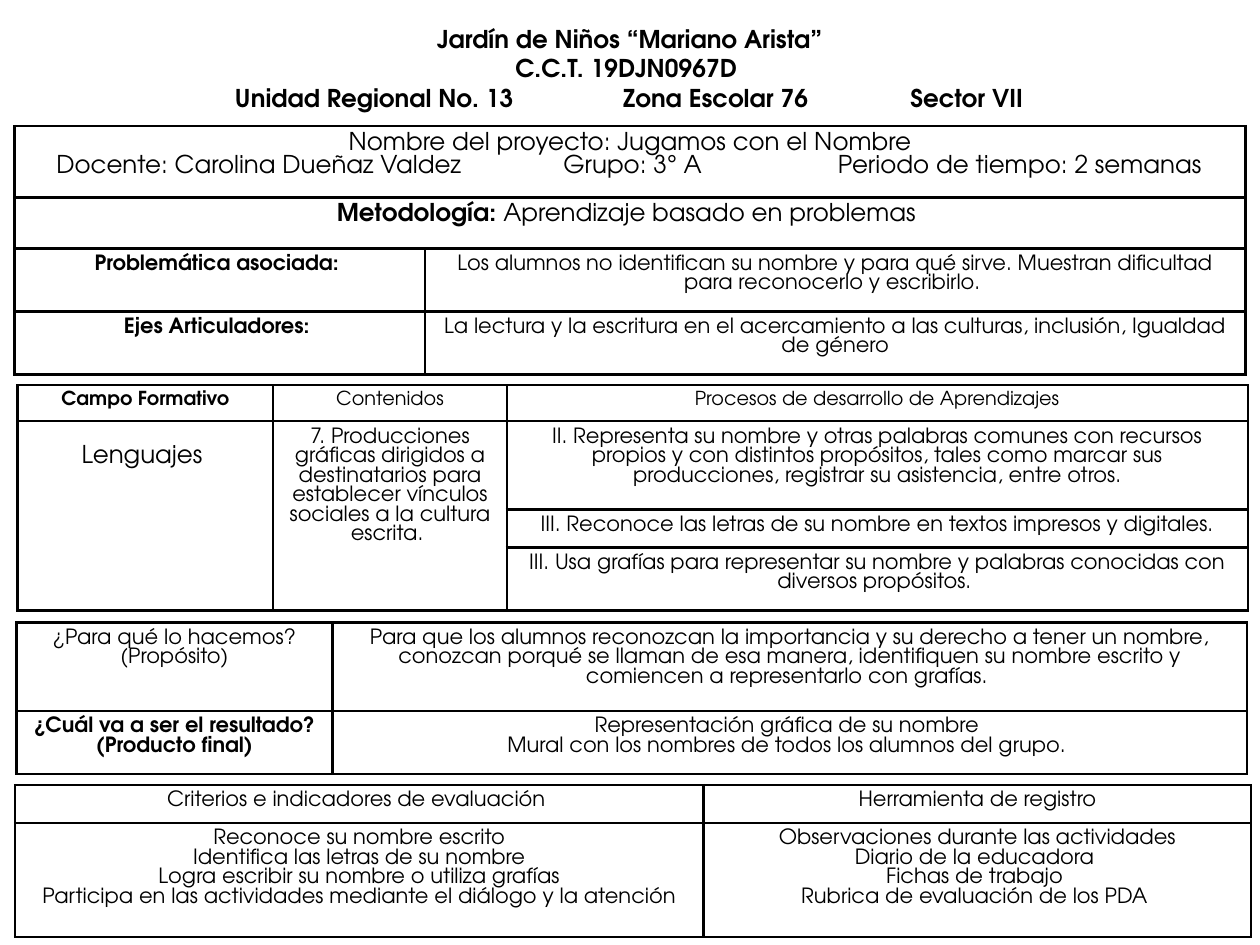
from pptx import Presentation
from pptx.dml.color import RGBColor as Rgb
from pptx.enum.text import PP_ALIGN as Align, MSO_AUTO_SIZE as Auto
from pptx.oxml import parse_xml as to_xml
from pptx.oxml.ns import nsdecls as names
from pptx.util import Pt

FONT = "TeX Gyre Adventor"
INK = "000000"


def color(code):
    return Rgb.from_string(code)


def add_run(para, text, size, bold):
    run = para.add_run()
    run.text = text
    font = run.font
    font.name, font.size, font.bold = FONT, Pt(size), bold
    font.color.rgb = color(INK)


def set_tabs(para, stops):
    para.alignment = Align.LEFT
    tabs = "".join(f'<a:tab pos="{Pt(stop)}" algn="ctr"/>' for stop in stops)
    para._p.get_or_add_pPr().append(
        to_xml(f'<a:tabLst {names("a")}>{tabs}</a:tabLst>'))


def write(frame, lines, size=12, bold=False, stops=()):
    frame.word_wrap = True
    for i, line in enumerate(lines):
        para = frame.add_paragraph() if i else frame.paragraphs[0]
        para.alignment = Align.CENTER
        runs = [(line, bold)] if isinstance(line, str) else line
        for text, heavy in runs:
            add_run(para, text, size, heavy)
        if "\t" in runs[0][0]:
            set_tabs(para, stops)


def add_edges(cell):
    props = cell._tc.get_or_add_tcPr()
    for i, side in enumerate(("lnL", "lnR", "lnT", "lnB")):
        props.insert(i, to_xml(
            f'<a:{side} {names("a")} w="{Pt(1.5)}"><a:solidFill>'
            f'<a:srgbClr val="{INK}"/></a:solidFill></a:{side}>'))


def add_grid(slide, left, top, cols, rows):
    shape = slide.shapes.add_table(len(rows), len(cols), Pt(left), Pt(top),
                                   Pt(sum(cols)), Pt(sum(rows)))
    grid = shape.table
    grid.first_row = grid.horz_banding = False
    for col, width in zip(grid.columns, cols):
        col.width = Pt(width)
    for row, height in zip(grid.rows, rows):
        row.height = Pt(height)
    for cell in grid.iter_cells():
        cell.fill.background()
        add_edges(cell)
    return grid


def fill(grid, row, col, *lines, **style):
    write(grid.cell(row, col).text_frame, lines, **style)


def add_title(slide):
    box = slide.shapes.add_textbox(Pt(56.9), Pt(10), Pt(606), Pt(58.3))
    write(box.text_frame, [
        "Jardín de Niños “Mariano Arista”",
        "C.C.T. 19DJN0967D ",
        "\tUnidad Regional No. 13\tZona Escolar 76\tSector VII",
    ], size=14, bold=True, stops=(150, 345, 488.5))
    box.text_frame.auto_size = Auto.SHAPE_TO_FIT_TEXT


def add_project(slide):
    grid = add_grid(slide, 8.3, 72, (234.5, 469), (40.7, 29.1, 36, 36))
    for row in (0, 1):
        grid.cell(row, 0).merge(grid.cell(row, 1))
    fill(grid, 0, 0, "Nombre del proyecto: Jugamos con el Nombre",
         "\tDocente: Carolina Dueñaz Valdez\tGrupo: 3° A"
         "\tPeriodo de tiempo: 2 semanas", size=14, stops=(132.5, 346, 567.3))
    fill(grid, 1, 0, [("Metodología: ", True),
                      ("Aprendizaje basado en problemas ", False)], size=14)
    fill(grid, 2, 0, "Problemática asociada: ", bold=True)
    fill(grid, 2, 1, "Los alumnos no identifican su nombre y para qué sirve. "
         "Muestran dificultad para reconocerlo y escribirlo. ")
    fill(grid, 3, 0, "Ejes Articuladores: ", bold=True)
    fill(grid, 3, 1, "La lectura y la escritura en el acercamiento a las "
         "culturas, inclusión, Igualdad de género")


def add_field(slide):
    grid = add_grid(slide, 10, 220.2, (146.2, 133.4, 423.6),
                    (20.5, 50.4, 21.7, 36))
    for col in (0, 1):
        grid.cell(1, col).merge(grid.cell(3, col))
    fill(grid, 0, 0, "Campo Formativo", size=11, bold=True)
    fill(grid, 0, 1, "Contenidos", size=11)
    fill(grid, 0, 2, "Procesos de desarrollo de Aprendizajes", size=11)
    grid.cell(1, 0).margin_top = Pt(14)
    fill(grid, 1, 0, "Lenguajes ", size=14)
    fill(grid, 1, 1, "7. Producciones gráficas dirigidos a destinatarios para "
         "establecer vínculos sociales a la cultura escrita. ")
    fill(grid, 1, 2, "II. Representa su nombre y otras palabras comunes con "
         "recursos propios y con distintos propósitos, tales como marcar sus "
         "producciones, registrar su asistencia, entre otros.")
    fill(grid, 2, 2, "III. Reconoce las letras de su nombre en textos impresos "
         "y digitales.")
    fill(grid, 3, 2, "III. Usa grafías para representar su nombre y palabras "
         "conocidas con diversos propósitos. ")


def add_goal(slide):
    grid = add_grid(slide, 9.4, 355.7, (180.6, 522.7), (50.4, 36))
    fill(grid, 0, 0, "¿Para qué lo hacemos?", "(Propósito)")
    fill(grid, 0, 1, "Para que los alumnos reconozcan la importancia y su "
         "derecho a tener un nombre, conozcan porqué se llaman de esa manera, "
         "identifiquen su nombre escrito y comiencen a representarlo con "
         "grafías. ")
    fill(grid, 1, 0, "¿Cuál va a ser el resultado?", "(Producto final)",
         bold=True)
    fill(grid, 1, 1, "Representación gráfica de su nombre ",
         "Mural con los nombres de todos los alumnos del grupo. ")


def add_marks(slide):
    grid = add_grid(slide, 8.6, 448.6, (393.5, 313), (21.3, 65.1))
    fill(grid, 0, 0, "Criterios e indicadores de evaluación ")
    fill(grid, 0, 1, "Herramienta de registro")
    fill(grid, 1, 0, "Reconoce su nombre escrito",
         "Identifica las letras de su nombre",
         "Logra escribir su nombre o utiliza grafías",
         "Participa en las actividades mediante el diálogo y la atención")
    fill(grid, 1, 1, "Observaciones durante las actividades",
         "Diario de la educadora ", "Fichas de trabajo ",
         "Rubrica de evaluación de los PDA ")


def main():
    deck = Presentation()
    deck.slide_width, deck.slide_height = Pt(720), Pt(540)
    slide = deck.slides.add_slide(deck.slide_layouts[6])
    for add in (add_title, add_project, add_field, add_goal, add_marks):
        add(slide)
    deck.save("out.pptx")


if __name__ == "__main__":
    main()
